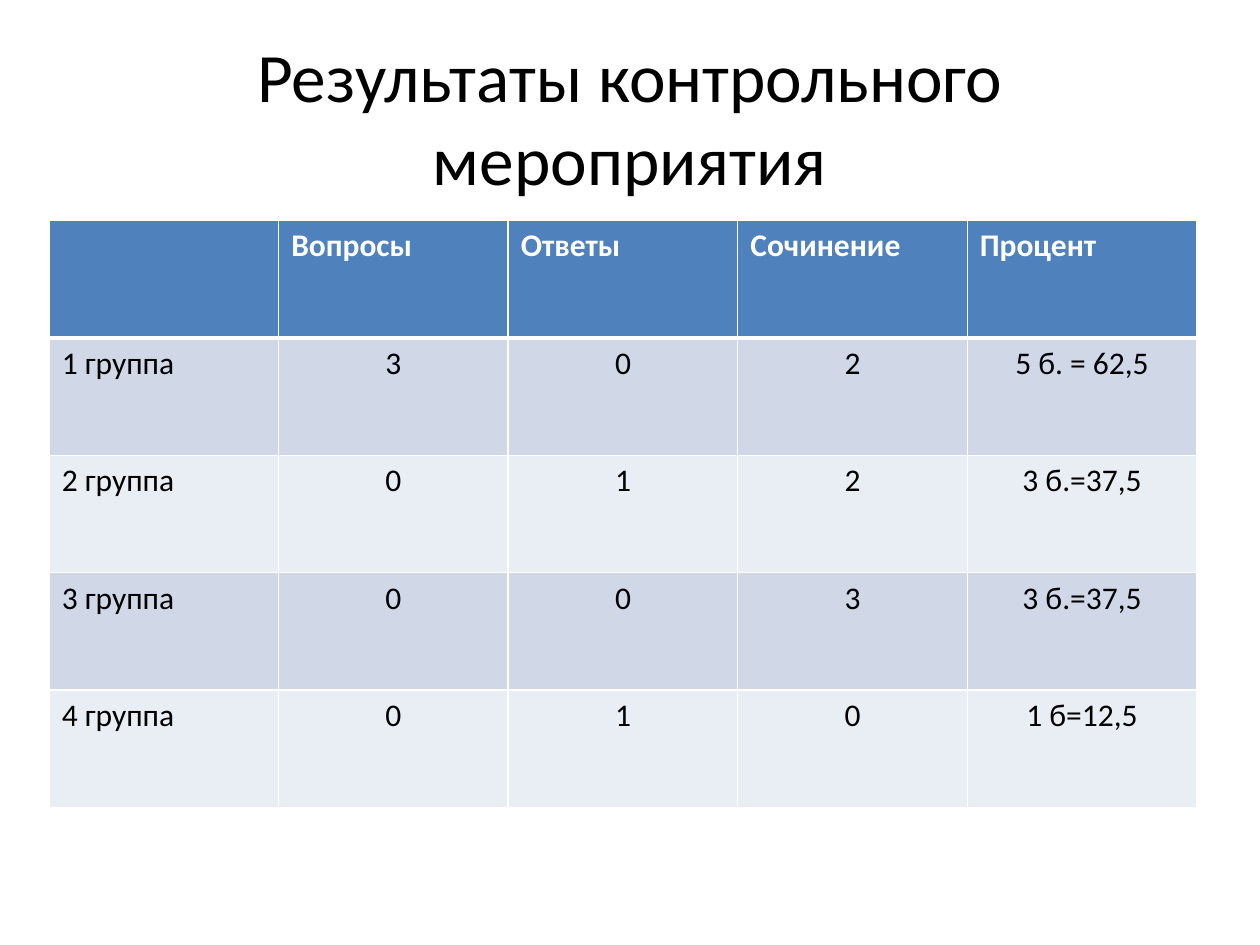
import dataclasses
import typing

import pptx
import pptx.dml.color
import pptx.enum.text
import pptx.oxml.ns
import pptx.util
from lxml import etree

ALIGN = pptx.enum.text.PP_ALIGN
ANCHOR = pptx.enum.text.MSO_ANCHOR


@dataclasses.dataclass(frozen=True)
class Theme:
    font: str = "Calibri"
    title_size: float = 39.6
    cell_size: float = 18
    ink: str = "000000"
    paper: str = "FFFFFF"
    header: str = "4F81BD"
    bands: tuple[str, str] = ("D0D8E8", "E9EDF4")
    rule: float = 1
    header_rule: float = 3


@dataclasses.dataclass(frozen=True)
class Box:
    """Position and size in inches."""
    left: float
    top: float
    width: float
    height: float

    def emu(self) -> list[int]:
        return [pptx.util.Inches(v) for v in dataclasses.astuple(self)]


@dataclasses.dataclass(frozen=True)
class RowStyle:
    fill: str
    color: str
    bold: bool
    value_align: ALIGN
    top_rule: float
    bottom_rule: float


THEME = Theme()
SLIDE_W, SLIDE_H = 10, 7.5
TITLE_BOX = Box(SLIDE_W * 0.05, SLIDE_H * 0.04, SLIDE_W * 0.9, 1.25)
TABLE_BOX = Box(0.39, 1.75, 9.11, 4.66)

TITLE = "Результаты контрольного мероприятия"
RESULTS = [
    ["", "Вопросы", "Ответы", "Сочинение", "Процент"],
    ["1 группа", "3", "0", "2", "5 б. = 62,5"],
    ["2 группа", "0", "1", "2", "3 б.=37,5"],
    ["3 группа", "0", "0", "3", "3 б.=37,5"],
    ["4 группа", "0", "1", "0", "1 б=12,5"],
]


def set_attrs(obj: typing.Any, values: dict[str, typing.Any]) -> None:
    for name, value in values.items():
        setattr(obj, name, value)


def write(tf, text: str, size: float, color: str, bold: bool, align: ALIGN) -> None:
    p = tf.paragraphs[0]
    p.alignment = align
    font = p.font
    if text:
        r = p.add_run()
        r.text = text
        font = r.font
    set_attrs(font, {"name": THEME.font, "size": pptx.util.Pt(size), "bold": bold})
    font.color.rgb = pptx.dml.color.RGBColor.from_string(color)


def add_borders(cell, widths: dict[str, float]) -> None:
    tc_pr = cell._tc.get_or_add_tcPr()
    qn = pptx.oxml.ns.qn
    for side, width in widths.items():
        ln = etree.SubElement(tc_pr, qn(f"a:ln{side}"), w=str(pptx.util.Pt(width)))
        fill = etree.SubElement(ln, qn("a:solidFill"))
        etree.SubElement(fill, qn("a:srgbClr"), val=THEME.paper)


def row_style(row: int) -> RowStyle:
    if row == 0:
        return RowStyle(THEME.header, THEME.paper, True, ALIGN.LEFT,
                        THEME.rule, THEME.header_rule)
    top = THEME.header_rule if row == 1 else THEME.rule
    return RowStyle(THEME.bands[(row - 1) % 2], THEME.ink, False, ALIGN.CENTER,
                    top, THEME.rule)


def add_title(s, text: str, box: Box) -> None:
    tf = s.shapes.add_textbox(*box.emu()).text_frame
    set_attrs(tf, {"word_wrap": True, "vertical_anchor": ANCHOR.MIDDLE})
    write(tf, text, THEME.title_size, THEME.ink, False, ALIGN.CENTER)


def add_results(s, rows: list[list[str]], box: Box) -> None:
    # add_table splits the box into equal columns and rows
    table = s.shapes.add_table(len(rows), len(rows[0]), *box.emu()).table
    for i, texts in enumerate(rows):
        style = row_style(i)
        for j, text in enumerate(texts):
            cell = table.cell(i, j)
            add_borders(cell, {"L": THEME.rule, "R": THEME.rule,
                               "T": style.top_rule, "B": style.bottom_rule})
            cell.fill.solid()
            cell.fill.fore_color.rgb = pptx.dml.color.RGBColor.from_string(style.fill)
            align = style.value_align if j else ALIGN.LEFT
            write(cell.text_frame, text, THEME.cell_size, style.color, style.bold, align)


def main() -> None:
    prs = pptx.Presentation()
    set_attrs(prs, {"slide_width": pptx.util.Inches(SLIDE_W),
                    "slide_height": pptx.util.Inches(SLIDE_H)})
    s = prs.slides.add_slide(prs.slide_layouts[6])
    # Heading
    add_title(s, TITLE, TITLE_BOX)
    # Scores by group
    add_results(s, RESULTS, TABLE_BOX)
    prs.save("out.pptx")


if __name__ == "__main__":
    main()
